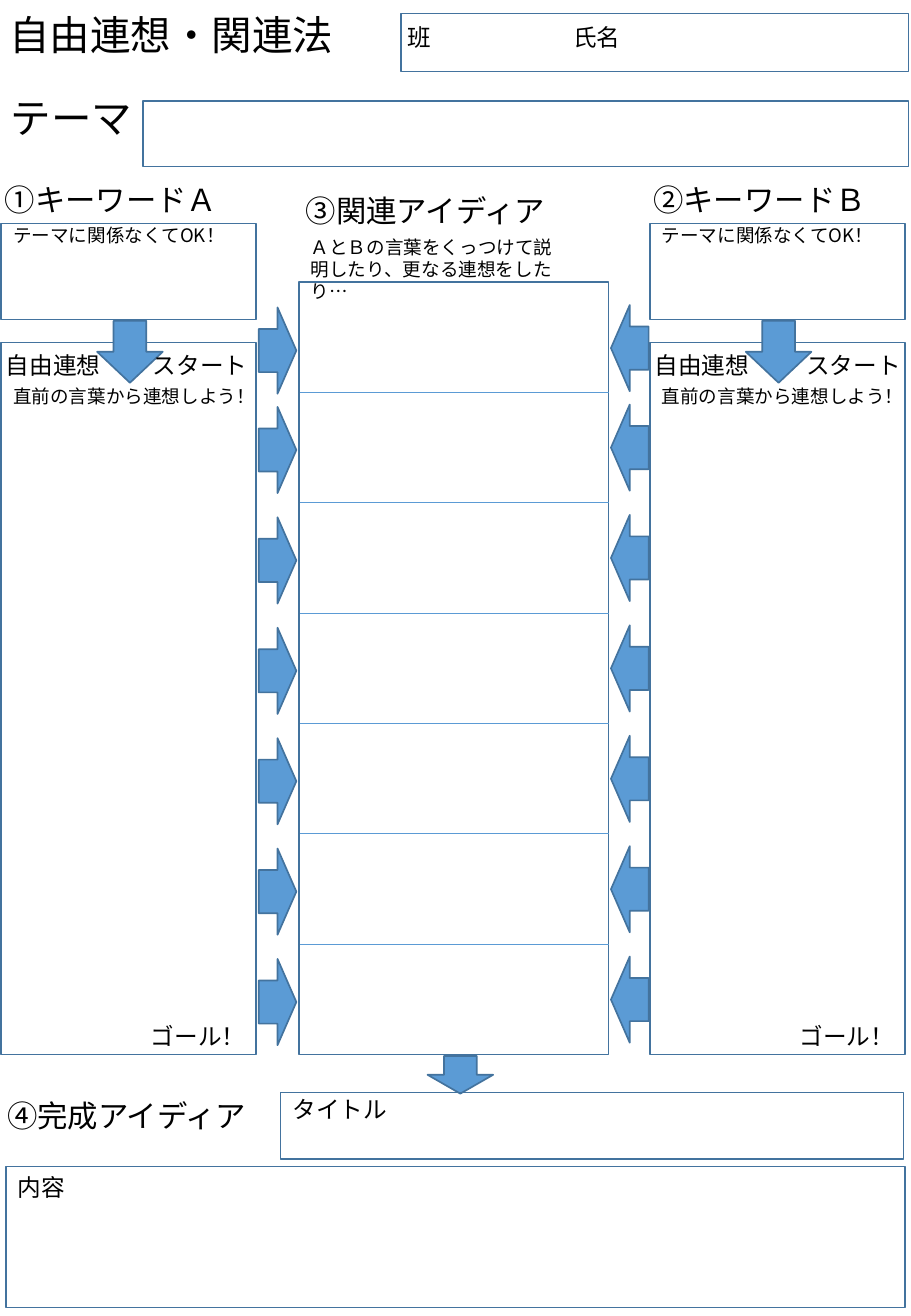
from lxml import etree
from pptx import Presentation
from pptx.dml.color import RGBColor
from pptx.enum.shapes import MSO_CONNECTOR, MSO_SHAPE
from pptx.enum.text import MSO_AUTO_SIZE, PP_ALIGN
from pptx.oxml.ns import qn
from pptx.util import Inches, Pt

RECT = MSO_SHAPE.RECTANGLE
DOWN = MSO_SHAPE.DOWN_ARROW
RIGHT = MSO_SHAPE.RIGHT_ARROW
LEFT = MSO_SHAPE.LEFT_ARROW
STRAIGHT = MSO_CONNECTOR.STRAIGHT
GROW = MSO_AUTO_SIZE.SHAPE_TO_FIT_TEXT
ALIGN_LEFT, ALIGN_RIGHT = PP_ALIGN.LEFT, PP_ALIGN.RIGHT

FONT = "Noto Sans CJK JP"
COLORS = {"text": "000000", "outline": "43739E", "accent": "5B9BD5"}
IDEA_ROWS = 7


def color(name):
    return RGBColor.from_string(COLORS[name])


def add_text(slide, text, left, top, width, height, size=14, align=ALIGN_LEFT, tab=None):
    label = slide.shapes.add_textbox(Inches(left), Inches(top), Inches(width), Inches(height))
    frame = label.text_frame
    frame.word_wrap = True
    frame.auto_size = GROW
    paragraph = frame.paragraphs[0]
    paragraph.alignment = align
    if tab:
        stops = etree.SubElement(paragraph._p.get_or_add_pPr(), qn("a:tabLst"))
        etree.SubElement(stops, qn("a:tab"), pos=str(Inches(tab)), algn="l")
    run = paragraph.add_run()
    run.text = text
    run.font.size = Pt(size)
    run.font.color.rgb = color("text")
    run.font.name = FONT
    etree.SubElement(run.font._element, qn("a:ea"), typeface=FONT)


def add_outlined(slide, kind, left, top, width, height, fill=None):
    shape = slide.shapes.add_shape(kind, Inches(left), Inches(top), Inches(width), Inches(height))
    shape.shadow.inherit = False
    if fill:
        shape.fill.solid()
        shape.fill.fore_color.rgb = color(fill)
    else:
        shape.fill.background()
    shape.line.color.rgb = color("outline")
    shape.line.width = Pt(1)


def add_divider(slide, left, right, y):
    line = slide.shapes.add_connector(STRAIGHT, Inches(left), Inches(y), Inches(right), Inches(y))
    line.line.color.rgb = color("accent")
    line.line.width = Pt(0.5)
    etree.SubElement(line._element.spPr, qn("a:effectLst"))


def add_header(slide, left, top, right):
    # Worksheet title, group and name
    add_text(slide, "自由連想・関連法", left - 0.02, top + 0.03, 4.34, 0.5, size=24)
    add_outlined(slide, RECT, left + 3.3, top + 0.11, right - left - 3.3, 0.48)
    add_text(slide, "班\t氏名", left + 3.26, top + 0.14, 2.42, 0.34, tab=1.36)
    # Theme
    add_text(slide, "テーマ", left - 0.01, top + 0.72, 4.34, 0.5, size=24)
    add_outlined(slide, RECT, left + 1.18, top + 0.83, right - left - 1.18, 0.54)


def add_keyword_column(slide, heading, left, top, width, start_tab):
    # Keyword entry
    add_text(slide, heading, left - 0.07, top - 0.4, 2.17, 0.4, size=18)
    add_outlined(slide, RECT, left, top, width, 0.79)
    add_text(slide, "テーマに関係なくてOK！", left, top - 0.05, 2.34, 0.29, size=11)
    # Free association, from start to goal
    add_outlined(slide, RECT, left, top + 0.98, width, 5.86)
    add_outlined(slide, DOWN, left + 0.79, top + 0.8, 0.54, 0.51, fill="accent")
    add_text(slide, "自由連想\tスタート", left - 0.06, top + 1, 2.34, 0.34, tab=start_tab)
    add_text(slide, "直前の言葉から連想しよう！", left, top + 1.28, 2.34, 0.29, size=11)
    add_text(slide, "ゴール！", left - 0.05, top + 6.52, 2.16, 0.34, align=ALIGN_RIGHT)


def add_idea_column(slide, left, top, width, height):
    add_text(slide, "③関連アイディア", left - 0.04, top - 0.79, 2.57, 0.4, size=18)
    add_outlined(slide, RECT, left, top, width, height)
    add_text(slide, "ＡとＢの言葉をくっつけて説明したり、更なる連想をしたり…",
             left, top - 0.43, 2.34, 0.47, size=11)
    # Idea rows, each fed by an arrow from both sides
    row_height = height / IDEA_ROWS
    for row in range(IDEA_ROWS):
        row_top = top + row * row_height
        if row:
            add_divider(slide, left + 0.01, left + width, row_top)
        arrow_top = row_top + (0.12 if row else 0.21)
        add_outlined(slide, RIGHT, left - 0.33, arrow_top, 0.31, 0.71, fill="accent")
        add_outlined(slide, LEFT, left + width + 0.02, arrow_top - 0.02, 0.31, 0.71, fill="accent")
    # Arrow to the finished idea
    add_outlined(slide, DOWN, left + 1.06, top + height + 0.01, 0.54, 0.31, fill="accent")


def add_finished_idea(slide, left, top, width):
    add_text(slide, "④完成アイディア", left - 0.09, top - 0.01, 2.34, 0.4, size=18)
    add_outlined(slide, RECT, left + 2.26, top, 5.13, 0.55)
    add_text(slide, "タイトル", left + 2.26, top - 0.03, 2.34, 0.34)
    add_outlined(slide, RECT, left, top + 0.61, width, 1.16)
    add_text(slide, "内容", left, top + 0.61, 2.34, 0.34)


def main():
    prs = Presentation()
    prs.slide_width, prs.slide_height = Inches(7.5), Inches(10.83)
    slide = prs.slides.add_slide(prs.slide_layouts[6])
    add_header(slide, 0, 0, 7.48)
    add_keyword_column(slide, "①キーワードＡ", 0.01, 1.84, 2.1, start_tab=1.21)
    add_keyword_column(slide, "②キーワードＢ", 5.35, 1.84, 2.1, start_tab=1.25)
    add_idea_column(slide, 2.46, 2.32, 2.55, 6.36)
    add_finished_idea(slide, 0.05, 8.99, 7.4)
    prs.save("out.pptx")


if __name__ == "__main__":
    main()
